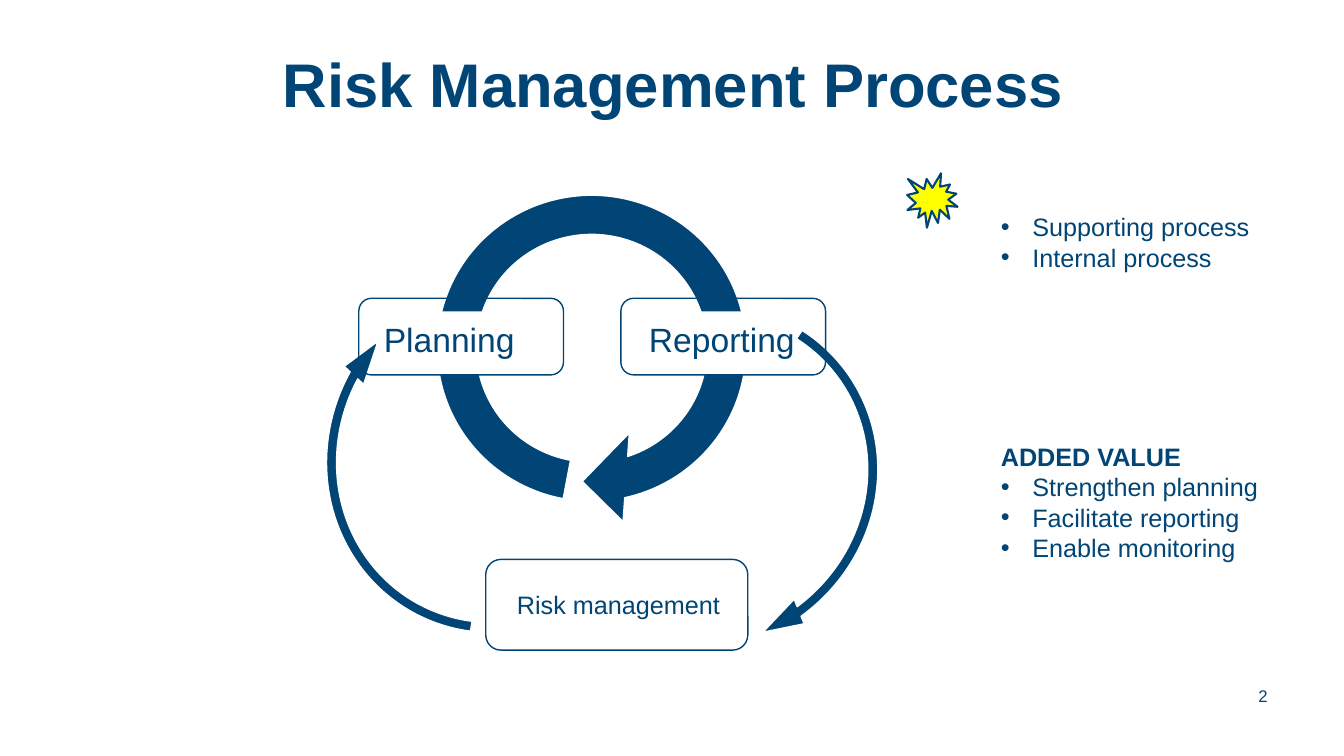
from dataclasses import dataclass

from lxml.etree import SubElement
from pptx import Presentation
from pptx.dml.color import RGBColor
from pptx.enum.shapes import MSO_SHAPE
from pptx.enum.text import MSO_ANCHOR, PP_ALIGN
from pptx.oxml.ns import qn
from pptx.util import Pt


@dataclass(frozen=True)
class Theme:
    navy: RGBColor = RGBColor(0x00, 0x45, 0x75)
    white: RGBColor = RGBColor(0xFF, 0xFF, 0xFF)
    yellow: RGBColor = RGBColor(0xFF, 0xFF, 0x00)
    font: str = "Arial"
    title: int = 44
    stage: int = 24
    body: int = 18
    page: int = 12


THEME = Theme()
BULLET_INDENT = Pt(22.5)


def add_figure(slide, preset, box, fill=None, line=None, weight=1):
    figure = slide.shapes.add_shape(preset, *map(Pt, box))
    figure.shadow.inherit = False
    if fill is None:
        figure.fill.background()
    else:
        figure.fill.solid()
        figure.fill.fore_color.rgb = fill
    if line is None:
        figure.line.fill.background()
    else:
        figure.line.color.rgb = line
        figure.line.width = Pt(weight)
    return figure


def add_cycle_arrow(slide, box, adjustments, rotation=0):
    arrow = add_figure(slide, MSO_SHAPE.CIRCULAR_ARROW, box, THEME.navy, THEME.white)
    for index, value in enumerate(adjustments):
        arrow.adjustments[index] = value
    arrow.rotation = rotation


def set_frame(frame, anchor=MSO_ANCHOR.TOP, top=3.6, right=7.2):
    frame.word_wrap = True
    frame.vertical_anchor = anchor
    frame.margin_left, frame.margin_right = Pt(7.2), Pt(right)
    frame.margin_top, frame.margin_bottom = Pt(top), Pt(3.6)


def write(paragraph, text, size, bold=False, align=PP_ALIGN.LEFT):
    paragraph.alignment = align
    run = paragraph.add_run()
    run.text = text
    run.font.name = THEME.font
    run.font.size = Pt(size)
    run.font.bold = bold
    run.font.color.rgb = THEME.navy


def add_label(slide, box, text, size, bold=False, align=PP_ALIGN.LEFT, **frame_options):
    label = slide.shapes.add_textbox(*map(Pt, box))
    set_frame(label.text_frame, **frame_options)
    paragraph = label.text_frame.paragraphs[0]
    write(paragraph, text, size, bold, align)
    return paragraph


def add_stage_name(slide, left, text):
    band = add_figure(slide, MSO_SHAPE.RECTANGLE, (left, 222.5, 189.4, 44.6), THEME.white)
    set_frame(band.text_frame, top=5.5)
    write(band.text_frame.paragraphs[0], text, THEME.stage)


def add_bullet(paragraph):
    properties = paragraph._p.get_or_add_pPr()
    properties.set("marL", str(BULLET_INDENT))
    properties.set("indent", str(-BULLET_INDENT))
    SubElement(properties, qn("a:buFont"), typeface=THEME.font)
    SubElement(properties, qn("a:buChar"), char="•")


def add_notes_list(slide, box, items, heading=None):
    frame = slide.shapes.add_textbox(*map(Pt, box)).text_frame
    set_frame(frame)
    lines = ([heading] if heading else []) + items
    for index, text in enumerate(lines):
        paragraph = frame.add_paragraph() if index else frame.paragraphs[0]
        if text != heading:
            add_bullet(paragraph)
        write(paragraph, text, THEME.body, bold=text == heading)


def main():
    deck = Presentation()
    deck.slide_width, deck.slide_height = Pt(960), Pt(540)
    slide = deck.slides.add_slide(deck.slide_layouts[6])

    add_label(slide, (884, 479, 35.5, 28.8), "2", THEME.page, align=PP_ALIGN.RIGHT,
              anchor=MSO_ANCHOR.BOTTOM, right=14)
    title = add_label(slide, (60, 35.3, 842, 104.4), "Risk Management Process",
                      THEME.title, True, PP_ALIGN.CENTER)
    title.line_spacing = 0.9

    add_cycle_arrow(slide, (294.5, 121.7, 256.3, 254.2), (0.11, 11.42, 45, 60.42, 0.125))
    add_stage_name(slide, 456.5, "Reporting")
    add_stage_name(slide, 267.1, "Planning")

    add_figure(slide, MSO_SHAPE.ROUNDED_RECTANGLE, (347, 399.6, 187.2, 64.8), line=THEME.navy)
    add_label(slide, (362.2, 417.6, 168.5, 28.8), "Risk management", THEME.body)

    side_arrow = (0.028, 8.67, 107.08, 41.7, 0.037)
    add_cycle_arrow(slide, (229, 190.1, 256.3, 269.3), side_arrow, 30)
    add_figure(slide, MSO_SHAPE.EXPLOSION1, (648, 123.8, 36, 38.9),
               THEME.yellow, THEME.navy, 1.5)
    add_notes_list(slide, (707.8, 147.6, 212.4, 51.1),
                   ["Supporting process", "Internal process"])
    add_cycle_arrow(slide, (372.2, 206.6, 256.3, 269.3), side_arrow, 235.1)

    for left in (256.3, 443.5):
        add_figure(slide, MSO_SHAPE.ROUNDED_RECTANGLE, (left, 213.1, 146.2, 54.7),
                   line=THEME.navy)
    add_notes_list(slide, (707.8, 311.8, 212.4, 94.3),
                   ["Strengthen planning", "Facilitate reporting", "Enable monitoring"],
                   heading="ADDED VALUE")

    deck.save("out.pptx")


if __name__ == "__main__":
    main()
